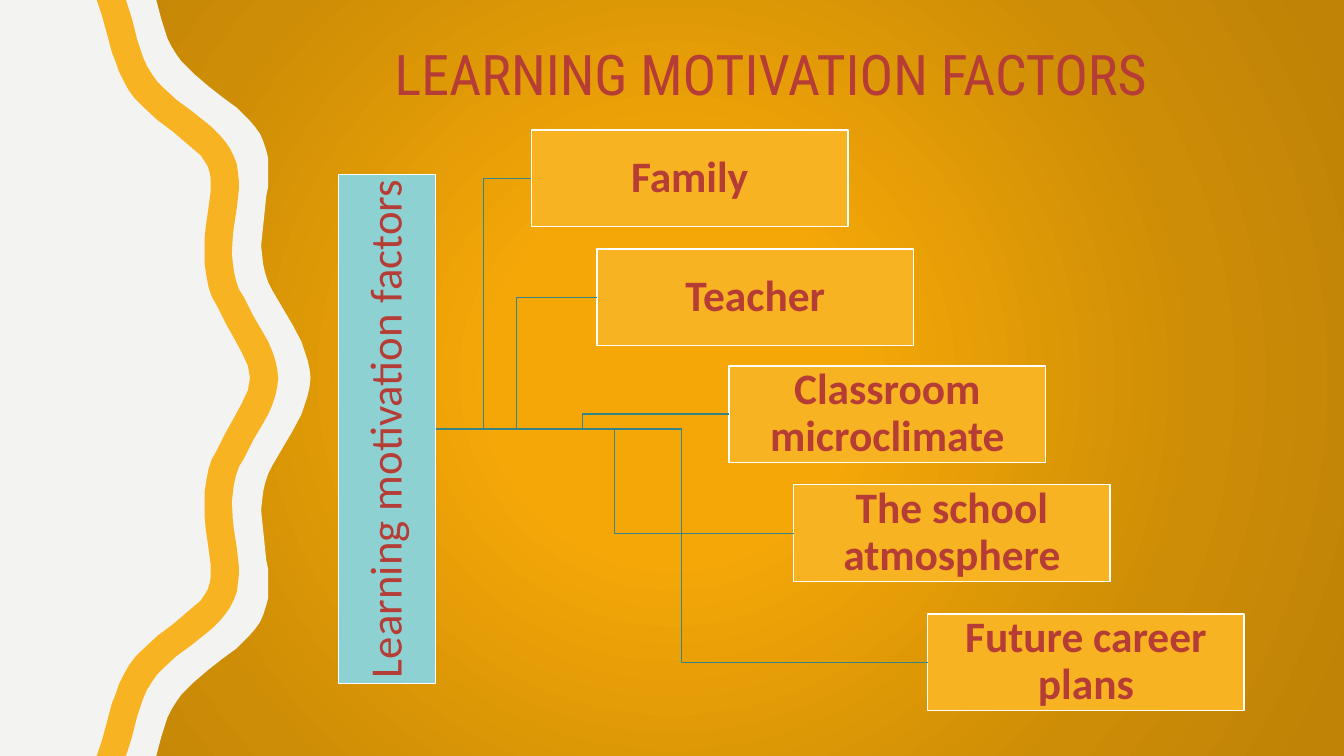
import pptx
import pptx.util
import pptx.dml.color
import pptx.enum.shapes
import pptx.enum.text
import pptx.oxml
import pptx.oxml.ns
import lxml.etree
from dataclasses import dataclass

Inches = pptx.util.Inches
Pt = pptx.util.Pt
qn = pptx.oxml.ns.qn


@dataclass(frozen=True)
class Theme:
    paper: str = "F3F3F2"
    ribbon: str = "F8B323"
    box: str = "F7B321"
    spine: str = "8ED1D3"
    edge: str = "FFFFFF"
    link: str = "348587"
    ink: str = "B63D35"
    glow: tuple = ((0, "F4A707"), (23, "F4A707"), (69, "CD8D06"),
                   (97, "BF8306"), (100, "BF8306"))
    head: str = "Roboto Condensed"
    body: str = "Calibri"
    title: int = 40
    label: int = 32
    factor: int = 31
    rule: int = 1


def rgb(code):
    return pptx.dml.color.RGBColor.from_string(code)


class Board:
    def __init__(self, slide, theme):
        self.slide = slide
        self.theme = theme

    def glow(self):
        stops = "".join(f'<a:gs pos="{pos * 1000}"><a:srgbClr val="{code}"/></a:gs>'
                        for pos, code in self.theme.glow)
        self.slide.background.fill.solid()
        solid = self.slide.element.find(".//" + qn("p:bgPr")).find(qn("a:solidFill"))
        grad = pptx.oxml.parse_xml(
            f'<a:gradFill {pptx.oxml.ns.nsdecls("a")} rotWithShape="1">'
            f'<a:gsLst>{stops}</a:gsLst><a:path path="circle">'
            '<a:fillToRect l="50000" t="50000" r="50000" b="50000"/>'
            '</a:path></a:gradFill>')
        solid.getparent().replace(solid, grad)

    def label(self, frame, text, font, size, bold=False):
        frame.text = text
        frame.word_wrap = True
        frame.auto_size = pptx.enum.text.MSO_AUTO_SIZE.NONE
        para = frame.paragraphs[0]
        para.alignment = pptx.enum.text.PP_ALIGN.CENTER
        para.line_spacing = 0.9
        run = para.runs[0].font
        run.name, run.size, run.bold = font, Pt(size), bold
        run.color.rgb = rgb(self.theme.ink)

    def title(self, text, left, top, width, height):
        shape = self.slide.shapes.title
        shape.left, shape.top = Inches(left), Inches(top)
        shape.width, shape.height = Inches(width), Inches(height)
        self.label(shape.text_frame, text, self.theme.head, self.theme.title)
        shape.text_frame.vertical_anchor = pptx.enum.text.MSO_ANCHOR.BOTTOM

    def wave(self, points, fill):
        pen = self.slide.shapes.build_freeform(
            round(points[0][0] * 100), round(points[0][1] * 100), Inches(0.01))
        pen.add_line_segments([(round(x * 100), round(y * 100)) for x, y in points[1:]])
        shape = pen.convert_to_shape()
        shape.shadow.inherit = False
        shape.fill.solid()
        shape.fill.fore_color.rgb = rgb(fill)
        shape.line.fill.background()

    def box(self, text, left, top, width, height, fill, size, bold=False):
        shape = self.slide.shapes.add_shape(
            pptx.enum.shapes.MSO_SHAPE.RECTANGLE,
            Inches(left), Inches(top), Inches(width), Inches(height))
        shape.shadow.inherit = False
        shape.fill.solid()
        shape.fill.fore_color.rgb = rgb(fill)
        shape.line.color.rgb = rgb(self.theme.edge)
        shape.line.width = Pt(self.theme.rule)
        frame = shape.text_frame
        frame.margin_left = frame.margin_right = Inches(0.02)
        frame.margin_top = frame.margin_bottom = Inches(0.02)
        frame.vertical_anchor = pptx.enum.text.MSO_ANCHOR.MIDDLE
        self.label(frame, text, self.theme.body, size, bold)
        return shape

    def spine(self, text, left, top, width, height):
        shape = self.box(text, left, top, width, height,
                         self.theme.spine, self.theme.label)
        shape.element.find(".//" + qn("a:bodyPr")).set("vert", "vert270")
        return shape

    def link(self, start, end):
        line = self.slide.shapes.add_connector(
            pptx.enum.shapes.MSO_CONNECTOR.ELBOW, 0, 0, 0, 0)
        line.begin_connect(start, 3)
        line.end_connect(end, 1)
        line.line.color.rgb = rgb(self.theme.link)
        line.line.width = Pt(self.theme.rule)
        lxml.etree.SubElement(line.element.spPr, qn("a:effectLst"))


HIGH = 7.5
SHORE = [
    (1.55, 0), (1.6, 0.19), (1.66, 0.38), (1.7, 0.46), (1.75, 0.54), (1.8, 0.61),
    (1.86, 0.67), (1.92, 0.73), (2.06, 0.85), (2.2, 0.96), (2.35, 1.07), (2.41, 1.13),
    (2.47, 1.19), (2.53, 1.26), (2.58, 1.33), (2.61, 1.4), (2.64, 1.49), (2.66, 1.57),
    (2.66, 1.85), (2.64, 1.95), (2.62, 2.15), (2.6, 2.34), (2.59, 2.44), (2.6, 2.53),
    (2.61, 2.62), (2.63, 2.71), (2.66, 2.8), (2.7, 2.88), (2.8, 3.05), (2.9, 3.22),
    (2.99, 3.39), (3.02, 3.48), (3.05, 3.57), (3.07, 3.66), (3.08, 3.75)]
OUTER = [
    (1.25, 0), (1.31, 0.19), (1.36, 0.39), (1.39, 0.48), (1.42, 0.57), (1.46, 0.66),
    (1.51, 0.74), (1.56, 0.81), (1.62, 0.87), (1.75, 0.99), (1.9, 1.1), (2.05, 1.22),
    (2.11, 1.27), (2.18, 1.34), (2.23, 1.4), (2.28, 1.47), (2.32, 1.55), (2.35, 1.63),
    (2.36, 1.71), (2.37, 1.8), (2.37, 1.88), (2.35, 2.06), (2.32, 2.25), (2.31, 2.34),
    (2.3, 2.52), (2.31, 2.61), (2.32, 2.69), (2.34, 2.78), (2.37, 2.87), (2.42, 2.95),
    (2.51, 3.13), (2.61, 3.3), (2.66, 3.39), (2.7, 3.48), (2.73, 3.57), (2.75, 3.66),
    (2.76, 3.75)]
INNER = [
    (0.96, 0), (1.01, 0.15), (1.06, 0.33), (1.11, 0.52), (1.15, 0.62), (1.18, 0.71),
    (1.23, 0.81), (1.28, 0.9), (1.34, 0.98), (1.41, 1.05), (1.56, 1.19), (1.72, 1.31),
    (1.86, 1.43), (1.99, 1.54), (2.03, 1.6), (2.06, 1.65), (2.08, 1.71), (2.09, 1.77),
    (2.09, 1.9), (2.07, 2.05), (2.04, 2.26), (2.03, 2.38), (2.03, 2.62), (2.05, 2.75),
    (2.07, 2.85), (2.1, 2.94), (2.15, 3.03), (2.24, 3.21), (2.33, 3.37), (2.4, 3.5),
    (2.46, 3.63), (2.48, 3.75)]
FACTORS = [("Family", 5.27, 1.29), ("Teacher", 5.92, 2.47),
           ("Classroom microclimate", 7.23, 3.63),
           ("The school atmosphere", 7.87, 4.81),
           ("Future career plans", 9.2, 6.09)]


def mirror(half):
    return half + [(x, HIGH - y) for x, y in reversed(half[:-1])]


def main():
    deck = pptx.Presentation()
    deck.slide_width, deck.slide_height = Inches(13.33), Inches(HIGH)
    theme = Theme()
    board = Board(deck.slides.add_slide(deck.slide_layouts[5]), theme)
    board.glow()
    board.wave([(0, 0)] + mirror(SHORE) + [(0, HIGH)], theme.paper)
    board.wave(mirror(OUTER) + mirror(INNER)[::-1], theme.ribbon)
    board.title("LEARNING MOTIVATION FACTORS", 3.17, -0.35, 8.95, 1.47)
    spine = board.spine("Learning motivation factors", 3.36, 1.73, 0.96, 5.05)
    for text, left, top in FACTORS:
        factor = board.box(text, left, top, 3.14, 0.96, theme.box, theme.factor, True)
        board.link(spine, factor)
    deck.save("out.pptx")


if __name__ == "__main__":
    main()
